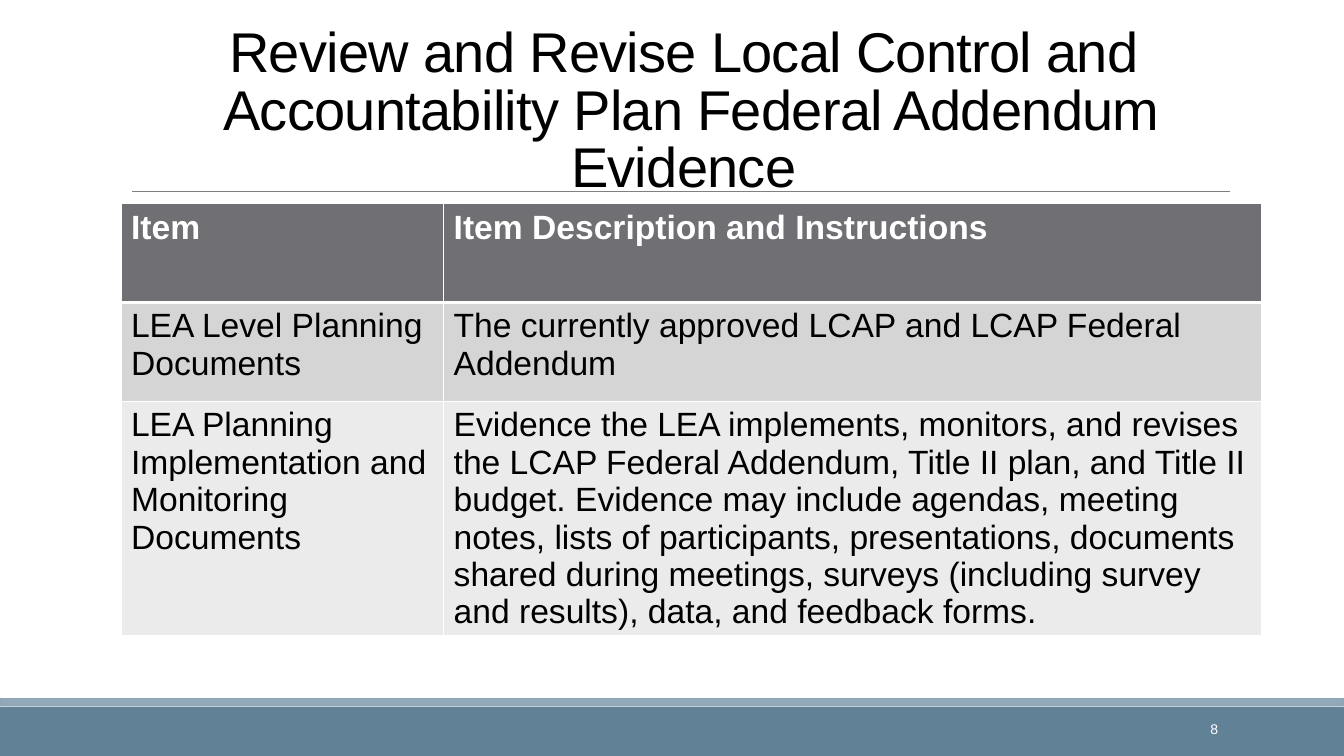
from lxml import etree
from pptx import Presentation
from pptx.dml.color import RGBColor
from pptx.enum import shapes, text
from pptx.oxml import ns
from pptx.util import Inches, Pt

COLORS = {
    "footer": "618197", "stripe": "92A9B9", "stripe_edge": "8FA3B6",
    "rule": "808080", "header": "6F6F74", "band_dark": "D5D5D6",
    "band_light": "EBEBEB", "white": "FFFFFF", "black": "000000",
}


def set_font(para, size, color, bold=False):
    para.font.name = "Arial"
    para.font.size = Pt(size)
    para.font.bold = bold
    para.font.color.rgb = RGBColor.from_string(COLORS[color])


def add_border(cell, side, width):
    edge = etree.SubElement(cell._tc.get_or_add_tcPr(), ns.qn(f"a:{side}"), w=str(Pt(width)))
    fill = etree.SubElement(edge, ns.qn("a:solidFill"))
    etree.SubElement(fill, ns.qn("a:srgbClr"), val=COLORS["white"])


deck = Presentation()
deck.slide_width, deck.slide_height = Inches(13.33), Inches(7.5)
page = deck.slides.add_slide(deck.slide_layouts[5])

for top, height, color in [(7.01, 0.49, "footer"), (6.93, 0.07, "stripe")]:
    bar = page.shapes.add_shape(
        shapes.MSO_SHAPE.RECTANGLE, 0, Inches(top), Inches(13.33), Inches(height))
    bar.shadow.inherit = False
    bar.fill.solid()
    bar.fill.fore_color.rgb = RGBColor.from_string(COLORS[color])
    if color == "stripe":
        bar.line.color.rgb = RGBColor.from_string(COLORS["stripe_edge"])
        bar.line.width = Pt(1.25)
    else:
        bar.line.fill.background()

rule = page.shapes.add_connector(
    shapes.MSO_CONNECTOR.STRAIGHT, Inches(1.31), Inches(1.9), Inches(12.2), Inches(1.9))
rule.line.color.rgb = RGBColor.from_string(COLORS["rule"])
rule.line.width = Pt(0.5)
etree.SubElement(rule._element.spPr, ns.qn("a:effectLst"))

title = page.shapes.title
title.left, title.top = Inches(1.2), Inches(0.43)
title.width, title.height = Inches(11.31), Inches(1.59)
title.text_frame.text = (
    "Review and Revise Local Control and \vAccountability Plan Federal Addendum Evidence ")
title.text_frame.auto_size = text.MSO_AUTO_SIZE.NONE
title.text_frame.vertical_anchor = text.MSO_ANCHOR.BOTTOM
para = title.text_frame.paragraphs[0]
para.alignment = text.PP_ALIGN.CENTER
para.line_spacing = 0.85
set_font(para, 40, "black")
for span in para.runs:
    span.font._element.set("spc", "-50")

rows = [
    ("Item", "Item Description and Instructions"),
    ("LEA Level Planning Documents",
     "The currently approved LCAP and LCAP Federal Addendum"),
    ("LEA Planning Implementation and Monitoring Documents",
     "Evidence the LEA implements, monitors, and revises the LCAP Federal Addendum, "
     "Title II plan, and Title II budget. Evidence may include agendas, meeting notes, "
     "lists of participants, presentations, documents shared during meetings, surveys "
     "(including survey and results), data, and feedback forms."),
]
row_fills = ["header", "band_dark", "band_light"]
row_heights = [0.98, 0.98, 2.32]
table = page.shapes.add_table(
    3, 2, Inches(1.2), Inches(2.02), Inches(11.31), Inches(sum(row_heights))).table
for column, width in zip(table.columns, [3.2, 8.11]):
    column.width = Inches(width)
for row_index, (row, height) in enumerate(zip(table.rows, row_heights)):
    row.height = Inches(height)
    is_header = row_index == 0
    for cell, words in zip(row.cells, rows[row_index]):
        cell.text = words
        set_font(cell.text_frame.paragraphs[0], 24,
                 "white" if is_header else "black", is_header)
        for side in ["lnL", "lnR", "lnT", "lnB"]:
            thick = (is_header and side == "lnB") or (row_index == 1 and side == "lnT")
            add_border(cell, side, 3 if thick else 1)
        cell.fill.solid()
        cell.fill.fore_color.rgb = RGBColor.from_string(COLORS[row_fills[row_index]])

number = page.shapes.add_textbox(Inches(10.74), Inches(7.03), Inches(1.44), Inches(0.4))
number.text_frame.word_wrap = True
number.text_frame.vertical_anchor = text.MSO_ANCHOR.MIDDLE
number.text_frame.text = "8"
number.text_frame.paragraphs[0].alignment = text.PP_ALIGN.RIGHT
set_font(number.text_frame.paragraphs[0], 10, "white")

deck.save("out.pptx")
